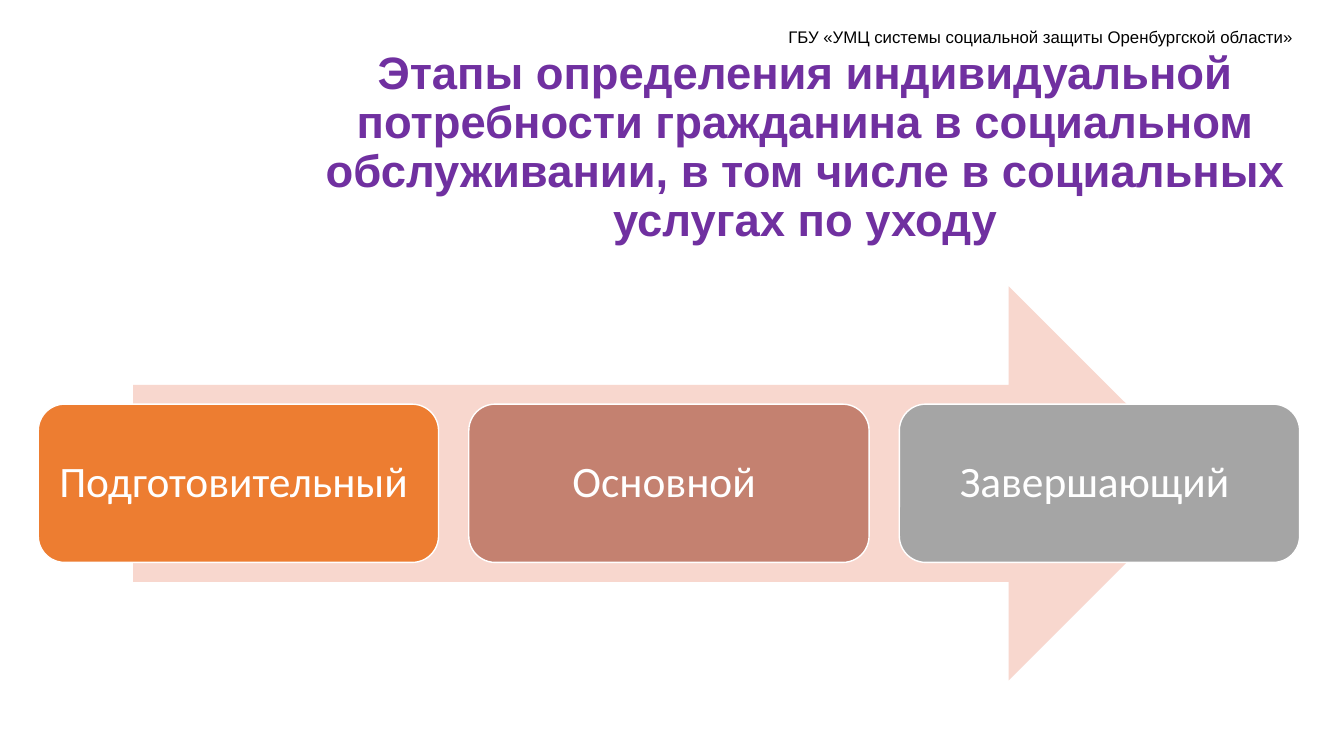
from dataclasses import dataclass

import pptx
import pptx.dml.color
import pptx.enum.shapes
import pptx.enum.text
import pptx.util

Inches = pptx.util.Inches
Pt = pptx.util.Pt
Shapes = pptx.enum.shapes.MSO_SHAPE
Align = pptx.enum.text.PP_ALIGN
Anchor = pptx.enum.text.MSO_ANCHOR

STAGE_LEFT, STAGE_TOP = 0.38, 4.01
STAGE_WIDTH, STAGE_HEIGHT = 3.97, 1.57
STAGE_STEP = 4.27
STAGE_INSET = 0.13


@dataclass
class Stage:
    name: str
    fill: str


@dataclass
class Label:
    text: str
    left: float
    top: float
    width: float
    height: float
    size: float
    color: str
    bold: bool
    align: Align
    anchor: Anchor
    line_spacing: float


STAGES = [
    Stage("Подготовительный ", "ED7D31"),
    Stage("Основной ", "C48170"),
    Stage("Завершающий ", "A5A5A5"),
]

LABELS = [
    Label("ГБУ «УМЦ системы социальной защиты Оренбургской области»",
          7.72, 0.22, 5.38, 0.3, 12, "000000", False, Align.LEFT, Anchor.TOP, 1.0),
    Label("Этапы определения индивидуальной потребности гражданина в социальном "
          "обслуживании, в том числе в социальных услугах по уходу",
          2.85, 0.66, 10.27, 1.62, 32.4, "7030A0", True, Align.CENTER, Anchor.MIDDLE, 0.9),
]


def color(value: str) -> pptx.dml.color.RGBColor:
    return pptx.dml.color.RGBColor.from_string(value)


def write(shape, text: str, font: str, size: float, ink: str, bold: bool,
          align: Align, anchor: Anchor, line_spacing: float) -> None:
    frame = shape.text_frame
    frame.text = text
    frame.word_wrap = True
    frame.vertical_anchor = anchor
    para = frame.paragraphs[0]
    para.alignment = align
    para.line_spacing = line_spacing
    span = para.runs[0]
    span.font.name = font
    span.font.size = Pt(size)
    span.font.bold = bold
    span.font.color.rgb = color(ink)


def draw_label(page, label: Label) -> None:
    box = page.shapes.add_textbox(Inches(label.left), Inches(label.top),
                                  Inches(label.width), Inches(label.height))
    write(box, label.text, "Arial", label.size, label.color, label.bold,
          label.align, label.anchor, label.line_spacing)


def draw_shape(page, kind: Shapes, left: float, top: float,
               width: float, height: float, fill: str):
    shape = page.shapes.add_shape(kind, Inches(left), Inches(top),
                                  Inches(width), Inches(height))
    shape.shadow.inherit = False
    shape.fill.solid()
    shape.fill.fore_color.rgb = color(fill)
    shape.line.fill.background()
    return shape


def draw_stage(page, index: int, stage: Stage) -> None:
    box = draw_shape(page, Shapes.ROUNDED_RECTANGLE, STAGE_LEFT + index * STAGE_STEP,
                     STAGE_TOP, STAGE_WIDTH, STAGE_HEIGHT, stage.fill)
    box.line.color.rgb = color("FFFFFF")
    box.line.width = Pt(1)
    frame = box.text_frame
    frame.margin_left = frame.margin_right = Inches(STAGE_INSET)
    frame.margin_top = frame.margin_bottom = Inches(STAGE_INSET)
    write(box, stage.name, "Calibri", 31, "FFFFFF", False,
          Align.CENTER, Anchor.MIDDLE, 0.9)


def main() -> None:
    deck = pptx.Presentation()
    deck.slide_width = Inches(13.33)
    deck.slide_height = Inches(7.5)
    page = deck.slides.add_slide(deck.slide_layouts[6])

    # Organisation line and title
    for label in LABELS:
        draw_label(page, label)

    # Arrow behind the stages
    draw_shape(page, Shapes.RIGHT_ARROW, 1.32, 2.84, 10.64, 3.91, "F8D7CE")

    # Stages from left to right
    for index, stage in enumerate(STAGES):
        draw_stage(page, index, stage)

    deck.save("out.pptx")


if __name__ == "__main__":
    main()
